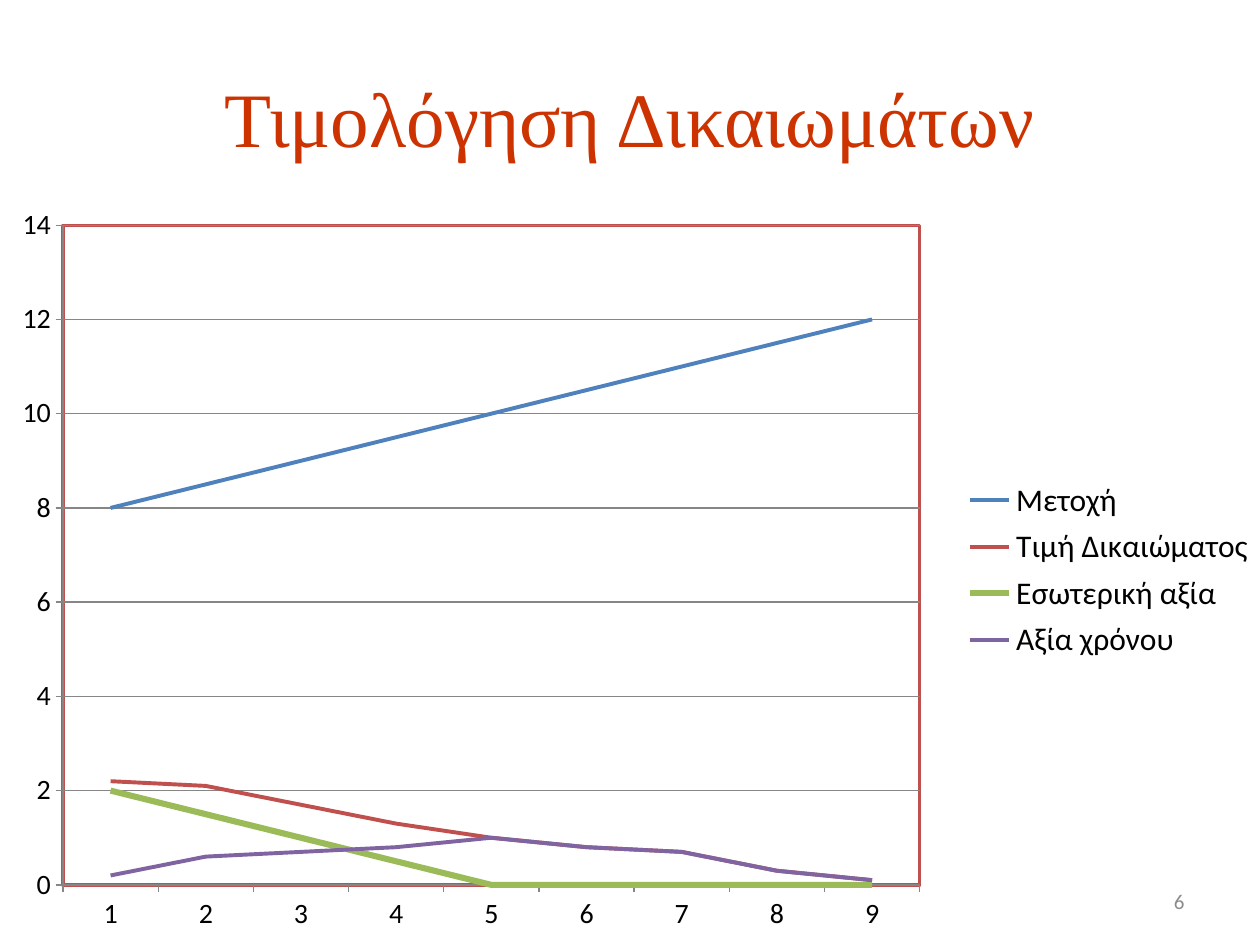
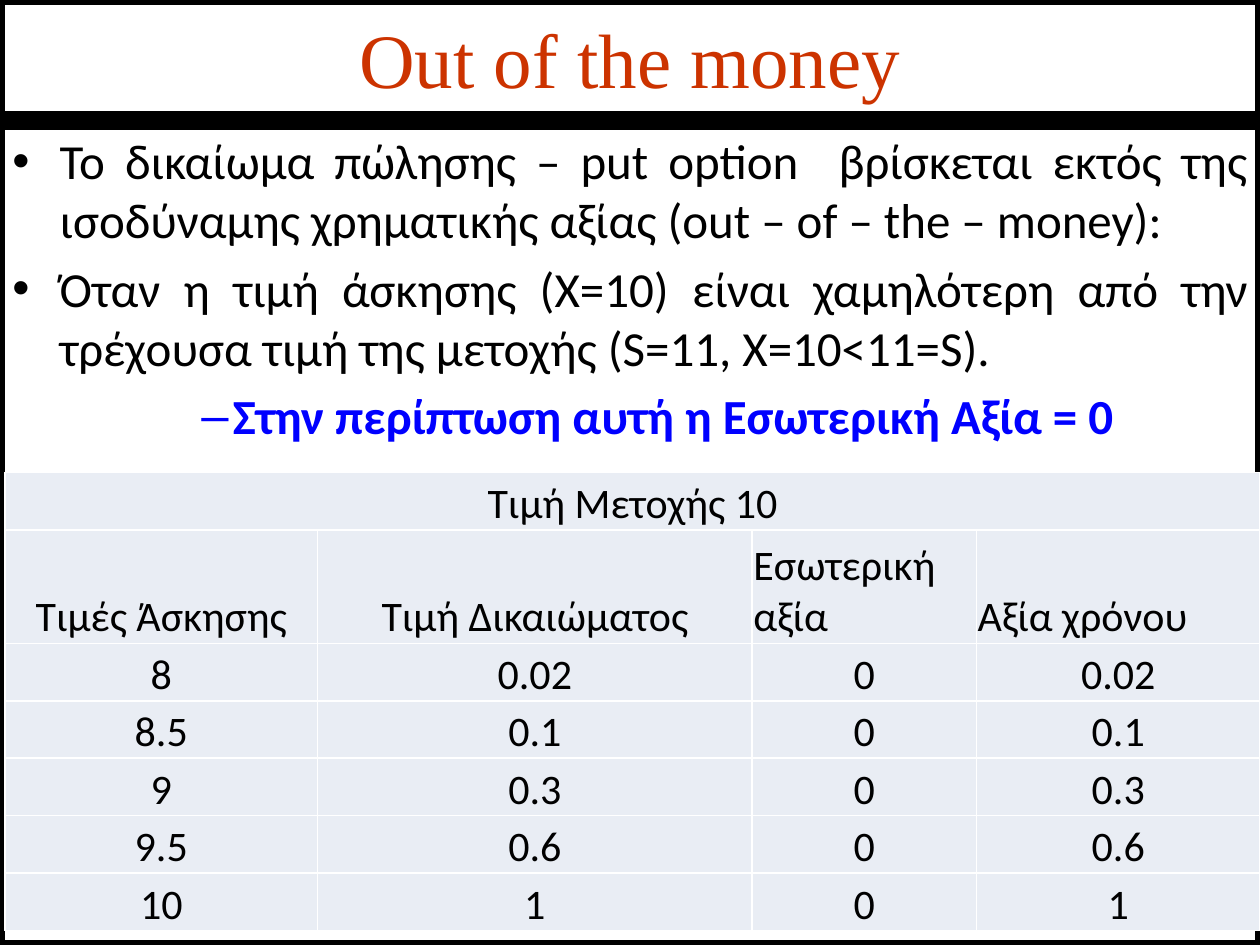
import pptx
import pptx.chart.data
import pptx.dml.color
import pptx.enum.chart
import pptx.enum.shapes
import pptx.enum.text
import pptx.oxml
import pptx.oxml.ns
import pptx.util
import lxml.etree

Pt = pptx.util.Pt
Color = pptx.dml.color.RGBColor.from_string
Align = pptx.enum.text.PP_ALIGN
Anchor = pptx.enum.text.MSO_ANCHOR
namespaces = pptx.oxml.ns.nsdecls("a", "c")
qn = pptx.oxml.ns.qn

theme = {
    "title": {"name": "Times New Roman", "size": Pt(44), "color": "CC3300"},
    "body": {"name": "Calibri", "size": Pt(28), "color": "000000"},
    "emphasis": {"name": "Calibri", "size": Pt(28), "color": "0000FF", "bold": True},
    "table": {"name": "Calibri", "size": Pt(24), "color": "000000"},
    "legend": {"name": "Calibri", "size": Pt(18), "color": "000000"},
    "axis": {"name": "Calibri", "size": Pt(16), "color": "000000"},
    "number": {"name": "Calibri", "size": Pt(12), "color": "8C8C8C"},
    "paper": "FFFFFF",
    "frame": "000000",
    "cell": "E9EDF4",
    "grid": "868686",
    "plot_border": "C0504D",
}


def set_values(target, values):
    for name, value in values.items():
        if name == "color":
            target.color.rgb = Color(value)
        else:
            setattr(target, name, value)


def write(paragraph, text, style, alignment):
    paragraph.alignment = alignment
    run = paragraph.add_run()
    run.text = text
    set_values(run.font, theme[style])


presentation = pptx.Presentation()
presentation.slide_width = pptx.util.Inches(10)
presentation.slide_height = pptx.util.Inches(7.5)
column = presentation.slide_width / 100
row = presentation.slide_height / 75
blank = presentation.slide_layouts[6]
chart_slide, money_slide = [presentation.slides.add_slide(blank) for _ in range(2)]

boxes = {}
for name, slide, framed, anchor, (left, top, width, height) in [
    ("number", chart_slide, False, Anchor.MIDDLE, (71.7, 69.5, 23.3, 4)),
    ("chart title", chart_slide, False, Anchor.MIDDLE, (5, 3, 90, 12.5)),
    ("money title", money_slide, True, Anchor.MIDDLE, (0, 0, 100, 9.2)),
    ("body", money_slide, True, Anchor.TOP, (0, 9.9, 100, 65.1)),
]:
    place = int(left * column), int(top * row), int(width * column), int(height * row)
    if framed:
        shape = slide.shapes.add_shape(pptx.enum.shapes.MSO_SHAPE.RECTANGLE, *place)
        shape.shadow.inherit = False
        shape.fill.solid()
        shape.fill.fore_color.rgb = Color(theme["paper"])
        set_values(shape.line, {"color": theme["frame"], "width": Pt(6)})
    else:
        shape = slide.shapes.add_textbox(*place)
    set_values(shape.text_frame, {"word_wrap": True, "vertical_anchor": anchor})
    boxes[name] = shape.text_frame

for name, text, style, alignment in [
    ("number", "6", "number", Align.RIGHT),
    ("chart title", "Τιμολόγηση Δικαιωμάτων", "title", Align.CENTER),
    ("money title", "Out of the money", "title", Align.CENTER),
]:
    write(boxes[name].paragraphs[0], text, style, alignment)

chart_data = pptx.chart.data.CategoryChartData()
chart_data.categories = [str(number) for number in range(1, 10)]
series_rows = [
    ("Μετοχή", "4F81BD", 2.25, [8 + step / 2 for step in range(9)]),
    ("Τιμή Δικαιώματος", "C0504D", 2.25, [2.2, 2.1, 1.7, 1.3, 1, 0.8, 0.7, 0.3, 0.1]),
    ("Εσωτερική αξία", "9BBB59", 3.5, [max(0, 2 - step / 2) for step in range(9)]),
    ("Αξία χρόνου", "8064A2", 2.25, [0.2, 0.6, 0.7, 0.8, 1, 0.8, 0.7, 0.3, 0.1]),
]
for name, color, width, values in series_rows:
    chart_data.add_series(name, values)
chart = chart_slide.shapes.add_chart(
    pptx.enum.chart.XL_CHART_TYPE.LINE,
    0, int(15.5 * row), int(100 * column), int(59.5 * row), chart_data,
).chart
set_values(chart, {"has_title": False, "has_legend": True})
set_values(chart.font, {**theme["axis"], "size": Pt(10)})
set_values(chart.legend, {
    "position": pptx.enum.chart.XL_LEGEND_POSITION.RIGHT,
    "include_in_layout": False,
})
set_values(chart.legend.font, theme["legend"])
chart.plots[0].vary_by_categories = False
for series, (name, color, width, values) in zip(chart.plots[0].series, series_rows):
    series.smooth = False
    set_values(series.format.line, {"color": color, "width": Pt(width)})
    series.marker.style = pptx.enum.chart.XL_MARKER_STYLE.NONE

for axis in (chart.category_axis, chart.value_axis):
    axis.major_tick_mark = pptx.enum.chart.XL_TICK_MARK.OUTSIDE
    set_values(axis.tick_labels.font, theme["axis"])
    set_values(axis.format.line, {"color": theme["grid"], "width": Pt(0.75)})
set_values(chart.value_axis, {
    "minimum_scale": 0, "maximum_scale": 14, "major_unit": 2, "has_major_gridlines": True,
})
set_values(chart.value_axis.major_gridlines.format.line,
           {"color": theme["grid"], "width": Pt(0.75)})

plot_area = chart._chartSpace.chart.plotArea
for parent, index, target, shares in [
    (plot_area, 0, '<c:layoutTarget val="inner"/>', (0.05, 0.04, 0.68, 0.88)),
    (chart.legend._element, 1, "", (0.76, 0.37, 0.24, 0.26)),
]:
    for old_layout in parent.findall(qn("c:layout")):
        parent.remove(old_layout)
    modes = "".join(f'<c:{side}Mode val="edge"/>' for side in "xy")
    sizes = "".join(f'<c:{side} val="{share}"/>' for side, share in zip("xywh", shares))
    parent.insert(index, pptx.oxml.parse_xml(
        f"<c:layout {namespaces}><c:manualLayout>{target}{modes}{sizes}"
        "</c:manualLayout></c:layout>"))
plot_area.append(pptx.oxml.parse_xml(
    f'<c:spPr {namespaces}><a:noFill/><a:ln w="{Pt(2)}"><a:solidFill>'
    f'<a:srgbClr val="{theme["plot_border"]}"/></a:solidFill></a:ln></c:spPr>'))

for index, (text, style, level, bullet, margin, indent) in enumerate([
    ("To δικαίωμα πώλησης – put option  βρίσκεται εκτός της ισοδύναμης χρηματικής "
     "αξίας (out – of – the – money):", "body", 0, "•", 3.75, -3.75),
    ("Όταν η τιμή άσκησης (Χ=10) είναι χαμηλότερη από την τρέχουσα τιμή της μετοχής "
     "(S=11, Χ=10<11=S).", "body", 0, "•", 3.75, -3.75),
    ("Στην περίπτωση αυτή η Εσωτερική Αξία = 0", "emphasis", 3, "–", 17.5, -2.5),
]):
    paragraph = boxes["body"].paragraphs[0] if index == 0 else boxes["body"].add_paragraph()
    write(paragraph, text, style, Align.JUSTIFY)
    paragraph.level = level
    properties = paragraph._p.get_or_add_pPr()
    properties.set("marL", str(int(margin * column)))
    properties.set("indent", str(int(indent * column)))
    for xml in (
        f'<a:spcBef {namespaces}><a:spcPct val="20000"/></a:spcBef>',
        f'<a:buFont {namespaces} typeface="Arial"/>',
        f'<a:buChar {namespaces} char="{bullet}"/>',
    ):
        properties.append(pptx.oxml.parse_xml(xml))

table_rows = [
    ["Τιμή Μετοχής 10", "", "", ""],
    ["Τιμές Άσκησης", "Τιμή Δικαιώματος", "Εσωτερική αξία", "Αξία χρόνου"],
]
for exercise_price, option_price in zip(["8", "8.5", "9", "9.5", "10"],
                                        ["0.02", "0.1", "0.3", "0.6", "1"]):
    table_rows.append([exercise_price, option_price, "0", option_price])
table = money_slide.shapes.add_table(
    len(table_rows), 4,
    int(0.4 * column), int(37.5 * row), int(99.6 * column), int(36.4 * row),
).table
set_values(table, {"first_row": False, "horz_banding": False})
for table_column, width in zip(table.columns, (24.8, 34.5, 17.8, 22.5)):
    table_column.width = int(width * column)
for index, table_row in enumerate(table.rows):
    table_row.height = int((9 if index == 1 else 4.56) * row)
table.cell(0, 0).merge(table.cell(0, 3))
for row_index, texts in enumerate(table_rows):
    for column_index, text in enumerate(texts):
        cell = table.cell(row_index, column_index)
        set_values(cell, {
            "vertical_anchor": Anchor.BOTTOM, "margin_bottom": 0,
            "margin_left": Pt(0.72), "margin_right": Pt(0.72), "margin_top": Pt(0.72),
        })
        for side in "LRTB":
            cell._tc.get_or_add_tcPr().append(pptx.oxml.parse_xml(
                f'<a:ln{side} {namespaces} w="{Pt(1)}"><a:solidFill>'
                f'<a:srgbClr val="{theme["paper"]}"/></a:solidFill></a:ln{side}>'))
        cell.fill.solid()
        cell.fill.fore_color.rgb = Color(theme["cell"])
        if text:
            left_aligned = row_index == 1 and column_index > 1
            write(cell.text_frame.paragraphs[0], text, "table",
                  Align.LEFT if left_aligned else Align.CENTER)

presentation.save("out.pptx")
